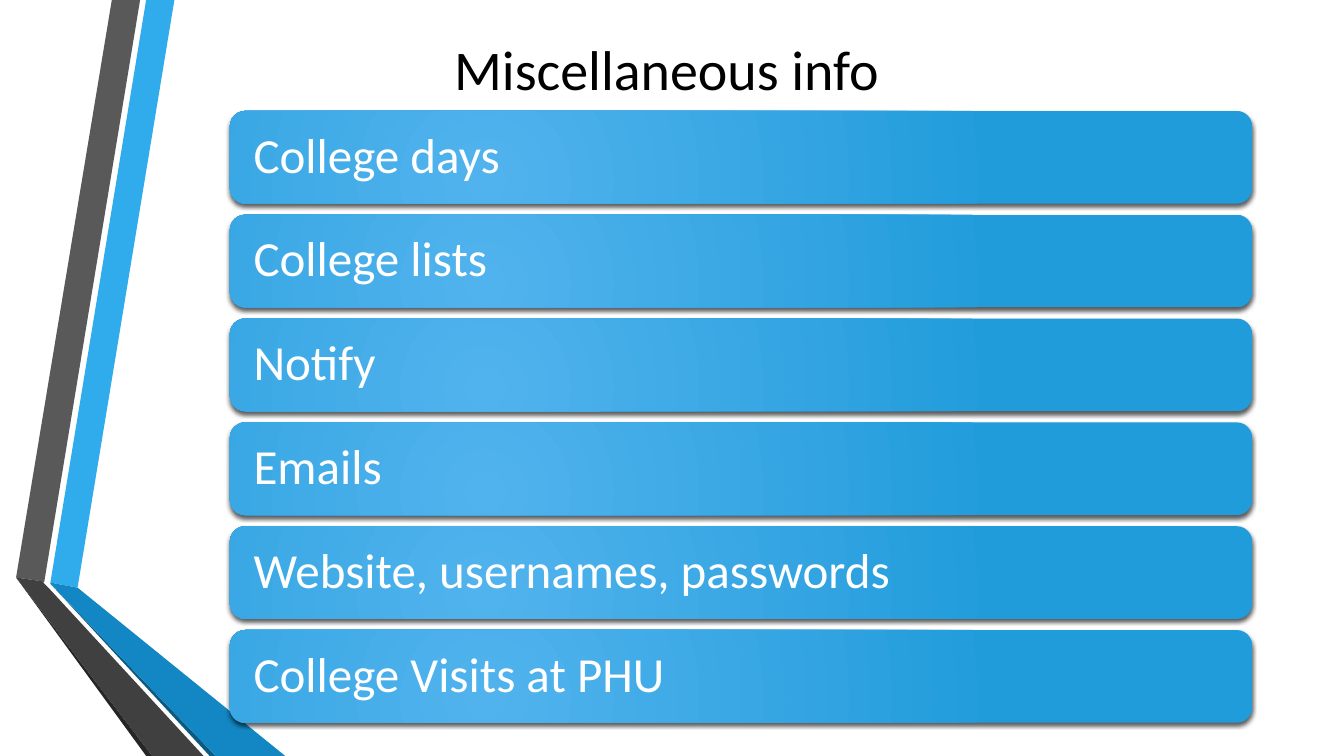
from lxml import etree
from pptx import Presentation
from pptx import util as u
from pptx.dml.color import RGBColor
from pptx.enum import shapes, text
from pptx.oxml import ns

COLORS = {
    "black": "000000", "white": "FFFFFF",
    "bar_light": "51B3ED", "bar_dark": "219CDB",
    "blue": "30ACEC", "blue_fold": "1287C3", "blue_edge": "0C5A82",
    "gray": "595959", "gray_fold": "404040", "gray_edge": "262626",
}

# Folded ribbons on the left, from back to front
RIBBONS = [
    ("blue", [(0.5, 5.78), (0.77, 5.83), (1.73, 0), (1.45, 0)]),
    ("gray", [(1.39, 0), (1.11, 0), (0.16, 5.73), (0.44, 5.77)]),
    ("gray_edge", [(0.16, 5.73), (1.45, 7.5), (1.51, 7.5)]),
    ("blue_edge", [(0.5, 5.79), (2.08, 7.5), (2.14, 7.5)]),
    ("blue_fold", [(0.5, 5.79), (2.14, 7.5), (2.83, 7.5), (0.77, 5.83), (0.5, 5.78)]),
    ("gray_fold", [(2.02, 7.5), (0.48, 5.83), (0.43, 5.78), (0.44, 5.77),
                   (0.16, 5.73), (1.51, 7.5)]),
]

TOPICS = ["College days", "College lists", "Notify", "Emails",
          "Website, usernames, passwords", "College Visits at PHU"]
BAR_LEFT, BAR_TOP, BAR_WIDTH, BAR_HEIGHT = 2.28, 1.1, 10.14, 0.92
BAR_STEP = 1.03


def add_xml(parent, tag, **attributes):
    return etree.SubElement(parent, ns.qn(tag), attributes)


class InfoSlide:
    font = "Calibri"

    def __init__(self, deck):
        self.slide = deck.slides.add_slide(deck.slide_layouts[5])

    def color(self, name):
        return RGBColor.from_string(COLORS[name])

    def label(self, shape, words, size, color, align):
        frame = shape.text_frame
        frame.text = words
        frame.word_wrap = True
        frame.vertical_anchor = text.MSO_ANCHOR.MIDDLE
        paragraph = frame.paragraphs[0]
        paragraph.alignment = align
        paragraph.line_spacing = 0.9
        font = paragraph.runs[0].font
        font.name, font.size = self.font, u.Pt(size)
        font.color.rgb = self.color(color)

    def title(self, words, left, top, width, height):
        heading = self.slide.shapes.title
        heading.left, heading.top = u.Inches(left), u.Inches(top)
        heading.width, heading.height = u.Inches(width), u.Inches(height)
        self.label(heading, words, 40, "black", text.PP_ALIGN.CENTER)

    def ribbon(self, color, points):
        corners = [(u.Inches(x), u.Inches(y)) for x, y in points]
        builder = self.slide.shapes.build_freeform(*corners[0])
        builder.add_line_segments(corners[1:], close=True)
        ribbon = builder.convert_to_shape()
        ribbon.shadow.inherit = False
        ribbon.fill.solid()
        ribbon.fill.fore_color.rgb = self.color(color)
        ribbon.line.fill.background()

    def bar(self, words, left, top, width, height):
        bar = self.slide.shapes.add_shape(
            shapes.MSO_SHAPE.ROUNDED_RECTANGLE,
            u.Inches(left), u.Inches(top), u.Inches(width), u.Inches(height))
        bar.line.fill.background()
        self.glow(bar)
        self.drop_shadow(bar)
        frame = bar.text_frame
        frame.margin_left = frame.margin_right = u.Inches(0.19)
        frame.margin_top = frame.margin_bottom = u.Inches(0.1)
        self.label(bar, words, 35, "white", text.PP_ALIGN.LEFT)

    def glow(self, bar):
        # Radial gradient
        bar.fill.gradient()
        for stop, color in zip(bar.fill.gradient_stops, ("bar_light", "bar_dark")):
            stop.color.rgb = self.color(color)
        gradient = bar.element.spPr.find(ns.qn("a:gradFill"))
        gradient.remove(gradient.find(ns.qn("a:lin")))
        circle = add_xml(gradient, "a:path", path="circle")
        add_xml(circle, "a:fillToRect", l="50000", t="100000", r="100000", b="50000")

    def drop_shadow(self, bar):
        bar.shadow.inherit = False
        effects = bar.element.spPr.find(ns.qn("a:effectLst"))
        shadow = add_xml(effects, "a:outerShdw", blurRad=str(u.Pt(3)),
                         dist=str(u.Pt(2)), dir="5400000", rotWithShape="0")
        tint = add_xml(shadow, "a:srgbClr", val=COLORS["black"])
        add_xml(tint, "a:alpha", val="64000")


def main():
    deck = Presentation()
    deck.slide_width, deck.slide_height = u.Inches(13.33), u.Inches(7.5)
    info = InfoSlide(deck)

    # Side decoration
    for color, points in RIBBONS:
        info.ribbon(color, points)

    # Heading and list of topics
    info.title("Miscellaneous info", 0.72, 0.06, 11.78, 1.31)
    for row, topic in enumerate(TOPICS):
        info.bar(topic, BAR_LEFT, BAR_TOP + row * BAR_STEP, BAR_WIDTH, BAR_HEIGHT)

    deck.save("out.pptx")


if __name__ == "__main__":
    main()
